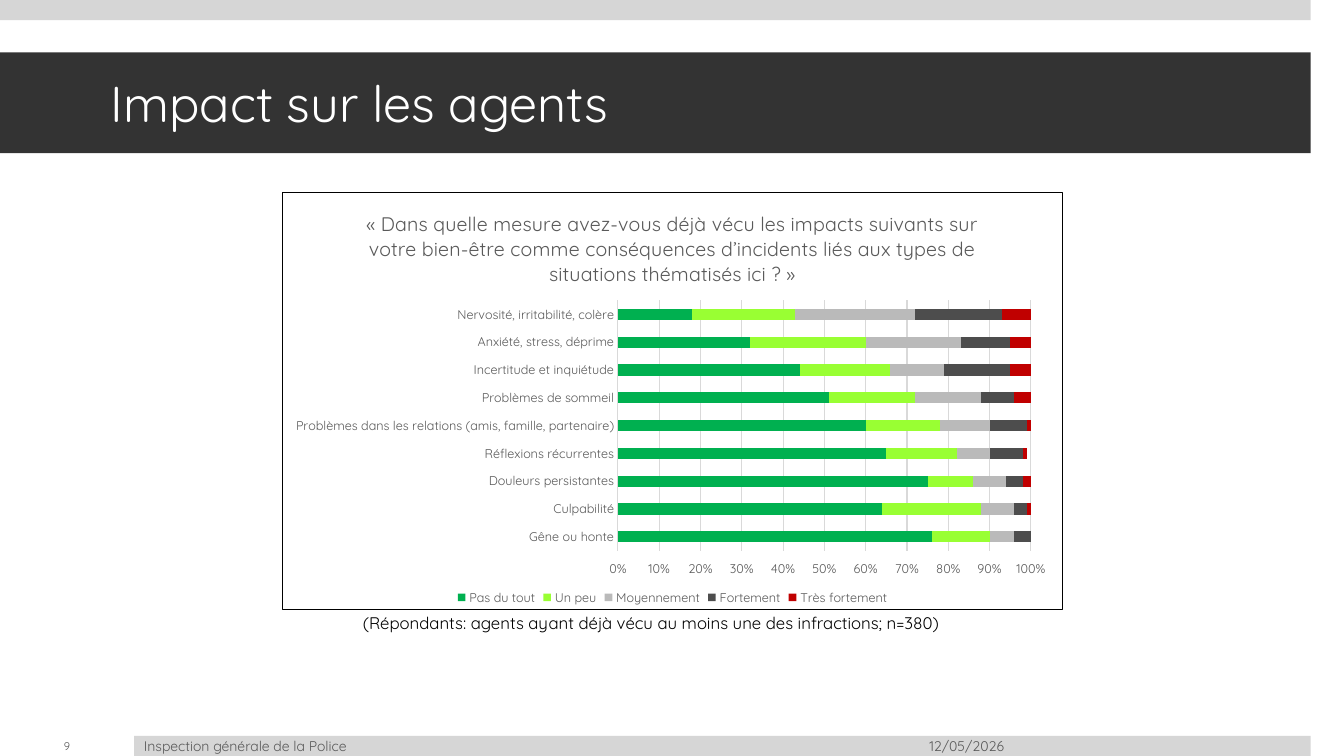
import pptx
import pptx.chart.data
import pptx.dml.color
import pptx.enum.chart
import pptx.enum.shapes
import pptx.enum.text
import pptx.oxml
import pptx.oxml.ns
import pptx.util

FONT = "Quicksand"
BAND, DARK, GREY = "D6D6D6", "333333", "595959"
RULE, BLACK, WHITE = "D9D9D9", "000000", "FFFFFF"
CELL = 0.1
BAND_WIDTH = 130

QUESTION = (
    "« Dans quelle mesure avez-vous déjà vécu les impacts suivants sur "
    "votre bien-être comme conséquences d’incidents liés aux types de "
    "situations thématisés ici ? »"
)
IMPACTS = [
    "Nervosité, irritabilité, colère",
    "Anxiété, stress, déprime",
    "Incertitude et inquiétude",
    "Problèmes de sommeil",
    "Problèmes dans les relations (amis, famille, partenaire)",
    "Réflexions récurrentes",
    "Douleurs persistantes",
    "Culpabilité",
    "Gêne ou honte",
]
ANSWERS = [
    ("Pas du tout", "00B050", (0.18, 0.32, 0.44, 0.51, 0.6, 0.65, 0.75, 0.64, 0.76)),
    ("Un peu", "99FF33", (0.25, 0.28, 0.22, 0.21, 0.18, 0.17, 0.11, 0.24, 0.14)),
    ("Moyennement", "BABABA", (0.29, 0.23, 0.13, 0.16, 0.12, 0.08, 0.08, 0.08, 0.06)),
    ("Fortement", "4D4D4D", (0.21, 0.12, 0.16, 0.08, 0.09, 0.08, 0.04, 0.03, 0.04)),
    ("Très fortement", "C00000", (0.07, 0.05, 0.05, 0.05, 0.02, 0.01, 0.03, 0.01, 0.01)),
]


def color(value):
    return pptx.dml.color.RGBColor.from_string(value)


def grid(*cells):
    return [pptx.util.Inches(cell * CELL) for cell in cells]


def set_font(font, size, value):
    font.name = FONT
    font.size = pptx.util.Pt(size)
    font.color.rgb = color(value)


def set_line(line, value):
    line.color.rgb = color(value)
    line.width = pptx.util.Pt(0.75)


def add_band(slide, left, top, width, height, fill):
    shape = slide.shapes.add_shape(
        pptx.enum.shapes.MSO_SHAPE.RECTANGLE, *grid(left, top, width, height)
    )
    shape.shadow.inherit = False
    shape.fill.solid()
    shape.fill.fore_color.rgb = color(fill)
    shape.line.fill.background()
    return shape


def write(shape, text, size, value, align="LEFT", anchor="MIDDLE", margins=(1, 0.5, 1, 0.5), tab=None):
    frame = shape.text_frame
    frame.word_wrap = True
    frame.vertical_anchor = getattr(pptx.enum.text.MSO_ANCHOR, anchor)
    frame.margin_left, frame.margin_top, frame.margin_right, frame.margin_bottom = grid(*margins)
    paragraph = frame.paragraphs[0]
    paragraph.alignment = getattr(pptx.enum.text.PP_ALIGN, align)
    if tab:
        paragraph._p.get_or_add_pPr().append(pptx.oxml.parse_xml(
            f'<a:tabLst {pptx.oxml.ns.nsdecls("a")}>'
            f'<a:tab pos="{grid(tab)[0]}" algn="r"/></a:tabLst>'
        ))
    run = paragraph.add_run()
    run.text = text
    set_font(run.font, size, value)


def add_text(slide, left, top, width, height, text, size, value, **layout):
    box = slide.shapes.add_textbox(*grid(left, top, width, height))
    write(box, text, size, value, **layout)


def style_axes(chart):
    category_axis, value_axis = chart.category_axis, chart.value_axis
    for axis in (category_axis, value_axis):
        axis.major_tick_mark = pptx.enum.chart.XL_TICK_MARK.NONE
        axis.minor_tick_mark = pptx.enum.chart.XL_TICK_MARK.NONE
        set_font(axis.tick_labels.font, 9, GREY)
    category_axis.reverse_order = True
    set_line(category_axis.format.line, RULE)
    value_axis.minimum_scale = 0
    value_axis.maximum_scale = 1
    value_axis.major_unit = 0.1
    value_axis.tick_label_position = pptx.enum.chart.XL_TICK_LABEL_POSITION.HIGH
    value_axis.tick_labels.number_format = "0%"
    value_axis.tick_labels.number_format_is_linked = False
    value_axis.format.line.fill.background()
    value_axis.has_major_gridlines = True
    set_line(value_axis.major_gridlines.format.line, RULE)


def frame_chart(chart, border, left, top, width, height):
    namespaces = pptx.oxml.ns.nsdecls("c", "a")
    chart_element = chart._chartSpace.find(pptx.oxml.ns.qn("c:chart"))
    chart_element.addnext(pptx.oxml.parse_xml(
        f'<c:spPr {namespaces}><a:noFill/><a:ln w="9525"><a:solidFill>'
        f'<a:srgbClr val="{border}"/></a:solidFill></a:ln></c:spPr>'
    ))
    plot_area = chart_element.find(pptx.oxml.ns.qn("c:plotArea"))
    for layout in plot_area.findall(pptx.oxml.ns.qn("c:layout")):
        plot_area.remove(layout)
    shares = "".join(
        f'<c:{name} val="{share}"/>'
        for name, share in zip("xywh", (left, top, width, height))
    )
    plot_area.insert(0, pptx.oxml.parse_xml(
        f'<c:layout {namespaces}><c:manualLayout><c:layoutTarget val="inner"/>'
        f'<c:xMode val="edge"/><c:yMode val="edge"/>{shares}</c:manualLayout></c:layout>'
    ))


def add_impact_chart(slide, left, top, width, height):
    data = pptx.chart.data.CategoryChartData(number_format="0%")
    data.categories = IMPACTS
    for name, _, values in ANSWERS:
        data.add_series(name, values)
    chart = slide.shapes.add_chart(
        pptx.enum.chart.XL_CHART_TYPE.BAR_STACKED, *grid(left, top, width, height), data
    ).chart
    set_font(chart.font, 10, BLACK)
    chart.has_title = True
    paragraph = chart.chart_title.text_frame.paragraphs[0]
    run = paragraph.add_run()
    run.text = QUESTION
    set_font(run.font, 14, GREY)
    run.font.bold = False
    chart.chart_title.include_in_layout = False

    plot = chart.plots[0]
    plot.gap_width = 150
    plot.overlap = 100
    plot.vary_by_categories = False
    for series, (_, fill, _) in zip(plot.series, ANSWERS):
        series.format.fill.solid()
        series.format.fill.fore_color.rgb = color(fill)
    style_axes(chart)
    chart.has_legend = True
    chart.legend.position = pptx.enum.chart.XL_LEGEND_POSITION.BOTTOM
    chart.legend.include_in_layout = False
    set_font(chart.legend.font, 9, GREY)
    frame_chart(chart, BLACK, 0.43, 0.26, 0.53, 0.6)


def main():
    presentation = pptx.Presentation()
    presentation.slide_width, presentation.slide_height = grid(133.3, 75)
    slide = presentation.slides.add_slide(presentation.slide_layouts[6])
    add_band(slide, 0, 0, BAND_WIDTH, 2, BAND)
    title = add_band(slide, 0, 5.2, BAND_WIDTH, 10, DARK)
    write(title, "Impact sur les agents", 36, WHITE, margins=(11, 0, 2, 0))
    add_text(slide, 0, 73, 13.3, 2, "9", 8, GREY, align="CENTER")
    footer = add_band(slide, 13.3, 73, BAND_WIDTH - 13.3, 2, BAND)
    write(footer, "Inspection générale de la Police\t12/05/2026", 10, GREY, tab=85.3)
    add_impact_chart(slide, 28, 19, 77.4, 41.5)
    add_text(
        slide, 35, 60.3, 63.3, 3,
        "(Répondants: agents ayant déjà vécu au moins une des infractions; n=380)",
        12, BLACK, anchor="TOP",
    )
    presentation.save("out.pptx")


if __name__ == "__main__":
    main()
